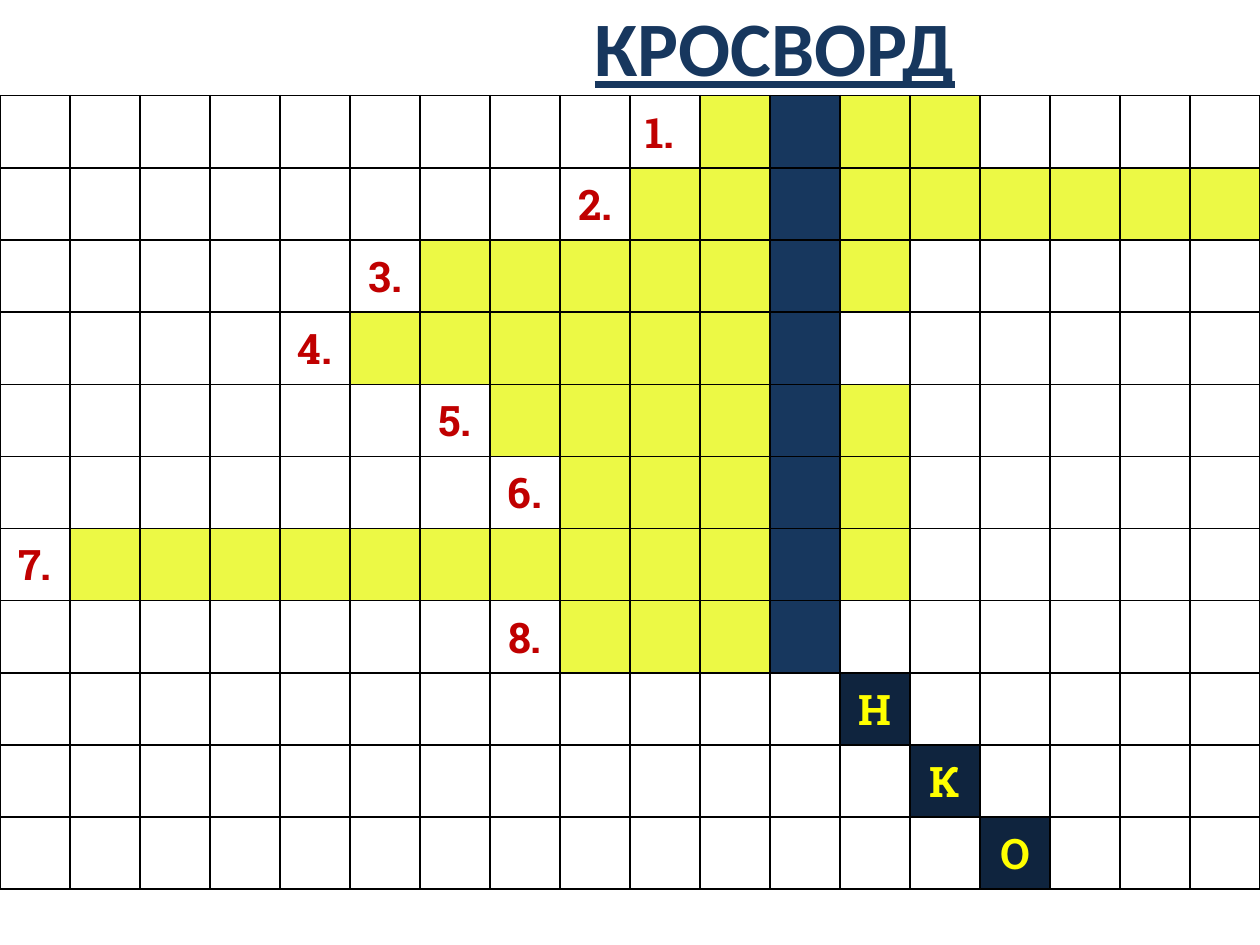
from dataclasses import dataclass
from lxml.etree import SubElement as Sub
from pptx import Presentation
from pptx.dml.color import RGBColor as RGB
from pptx.enum.text import MSO_ANCHOR as Anchor, PP_ALIGN as Align
from pptx.oxml.ns import qn
from pptx.util import Inches, Pt

TITLE = "КРОСВОРД"
COLS = 18
KEY = 11
CLUES = [
    ("1. ", 9, 13),
    ("2.", 8, 17),
    ("3.", 5, 12),
    ("4.", 4, 11),
    ("5.", 6, 12),
    ("6.", 7, 12),
    ("7.", 0, 12),
    ("8.", 7, 11),
]
TAIL = "НКО"


@dataclass(frozen=True)
class Theme:
    navy: str = "17375E"
    dark: str = "0F243E"
    lime: str = "ECF945"
    white: str = "FFFFFF"
    red: str = "C00000"
    gold: str = "FFFF00"
    black: str = "000000"
    head: str = "Calibri"
    body: str = "Roboto Slab"
    big: int = 44
    mid: int = 24
    line: int = 1


T = Theme()


def write(frame, text, font, size, color, under=False):
    frame.vertical_anchor = Anchor.MIDDLE
    para = frame.paragraphs[0]
    para.alignment = Align.CENTER
    run = para.add_run()
    run.text = text
    run.font.name = font
    run.font.size = Pt(size)
    run.font.bold = True
    run.font.underline = under
    run.font.color.rgb = RGB.from_string(color)


def border(cell):
    props = cell._tc.get_or_add_tcPr()
    for at, side in enumerate(("lnL", "lnR", "lnT", "lnB")):
        line = Sub(props, qn(f"a:{side}"), w=str(Pt(T.line)))
        Sub(Sub(line, qn("a:solidFill")), qn("a:srgbClr"), val=T.black)
        props.insert(at, line)


def look(row, col):
    if row >= len(CLUES):
        step = row - len(CLUES)
        if col == KEY + 1 + step:
            return T.dark, TAIL[step], T.gold
        return T.white, "", T.red
    mark, start, end = CLUES[row]
    if col == start:
        return T.white, mark, T.red
    if col == KEY:
        return T.navy, "", T.red
    fill = T.lime if start < col <= end else T.white
    return fill, "", T.red


def main():
    deck = Presentation()
    deck.slide_width, deck.slide_height = Inches(10), Inches(7.5)
    wide, high = deck.slide_width, deck.slide_height
    slide = deck.slides.add_slide(deck.slide_layouts[6])

    box = slide.shapes.add_textbox(
        Inches(4.37), Inches(0.06), Inches(3.56), Inches(0.61))
    box.text_frame.word_wrap = False
    write(box.text_frame, TITLE, T.head, T.big, T.navy, True)

    rows = len(CLUES) + len(TAIL)
    grid = slide.shapes.add_table(
        rows, COLS, 0, Inches(0.76), wide, int(high * 0.84)).table
    grid.first_row = grid.horz_banding = False
    for row in range(rows):
        for col in range(COLS):
            cell = grid.cell(row, col)
            cell.margin_left = cell.margin_right = Inches(0.03)
            fill, text, color = look(row, col)
            cell.fill.solid()
            cell.fill.fore_color.rgb = RGB.from_string(fill)
            border(cell)
            if text:
                cell.vertical_anchor = Anchor.MIDDLE
                write(cell.text_frame, text, T.body, T.mid, color)

    deck.save("out.pptx")


if __name__ == "__main__":
    main()
